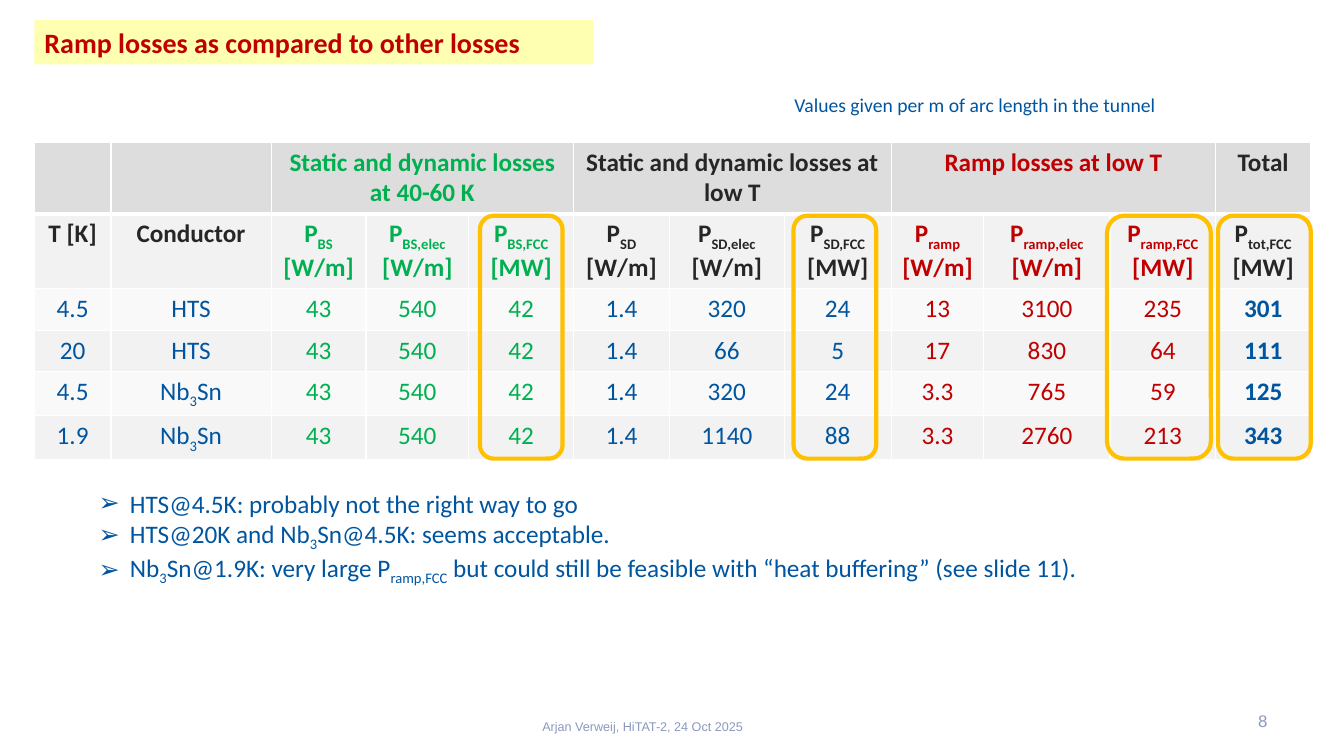
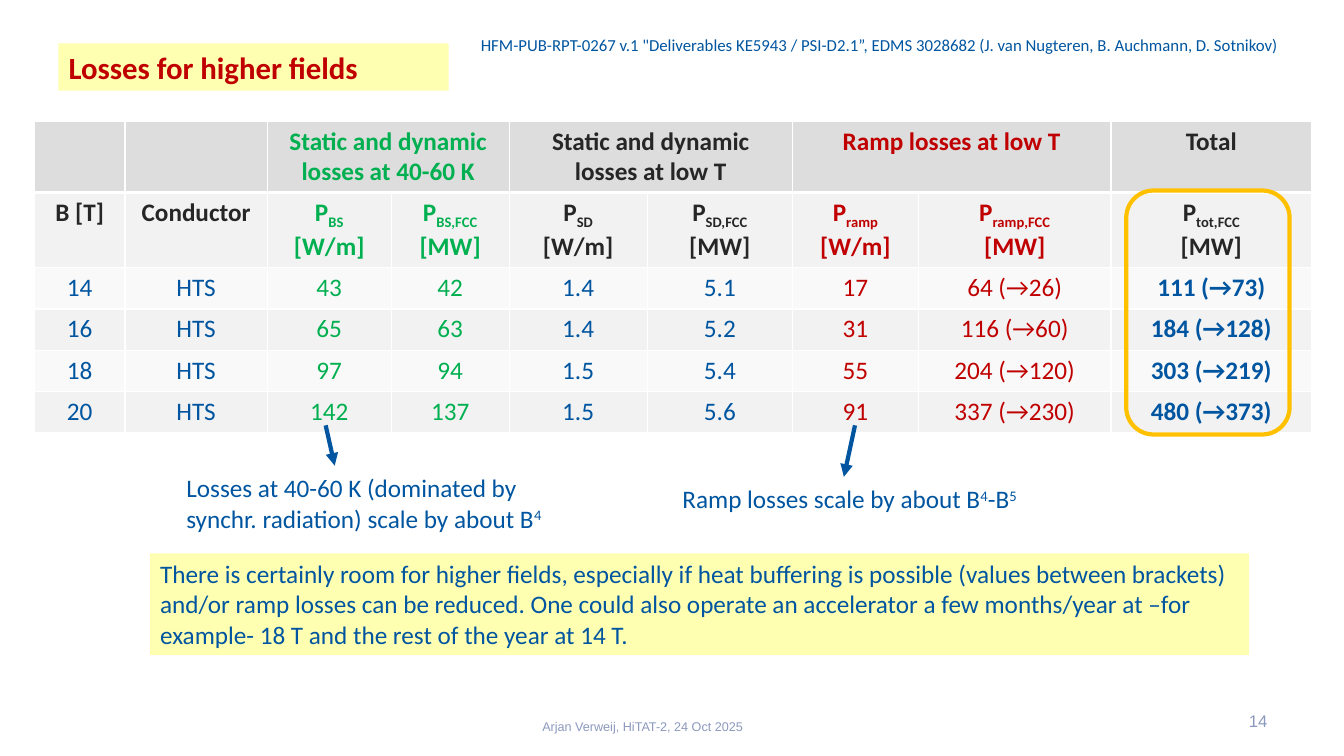
"""Build two slides on accelerator magnet losses."""
import lxml.etree
import pptx
import pptx.dml.color
import pptx.enum.shapes
import pptx.enum.text
import pptx.oxml.ns
import pptx.util

Inches = pptx.util.Inches
qn = pptx.oxml.ns.qn
ALIGN = pptx.enum.text.PP_ALIGN
ANCHOR = pptx.enum.text.MSO_ANCHOR

COLORS = {
    "blue": "0055A0", "red": "C00000", "green": "00B050", "ink": "262626",
    "footer": "8C99BE", "yellow": "FFFF00", "orange": "FFC000", "white": "FFFFFF",
    "header": "DDDDDD", "odd": "F2F2F2", "even": "F9F9F9",
}
BODY = {"name": "Calibri", "size": 18, "color": "blue", "bold": False}
FOOTER = {"name": "Arial", "size": 9, "color": "footer", "bold": False}
TITLE = {**BODY, "color": "red", "bold": True}
TABLE_LEFT = 0.34
ROW_HEIGHT = 0.41
SUBSCRIPT, SUPERSCRIPT = -25000, 30000


def rgb(name):
    """Return the named colour."""
    return pptx.dml.color.RGBColor.from_string(COLORS[name])


def set_attributes(target, values):
    """Set each attribute of the target from a dict."""
    for name, value in values.items():
        setattr(target, name, value)


def place(shape, box):
    """Move and size a shape in inches."""
    names = ("left", "top", "width", "height")
    set_attributes(shape, {name: Inches(value) for name, value in zip(names, box)})


def format_font(font, style):
    """Apply a text style to a font."""
    set_attributes(font, {"name": style["name"], "bold": style["bold"],
                          "size": pptx.util.Pt(style["size"])})
    font.color.rgb = rgb(style["color"])


def add_bullet(paragraph):
    """Give a paragraph an arrowhead bullet with a hanging indent."""
    properties = paragraph._p.get_or_add_pPr()
    indent = Inches(0.31)
    properties.set("marL", str(indent))
    properties.set("indent", str(-indent))
    lxml.etree.SubElement(properties, qn("a:buFont"), typeface="Arial")
    lxml.etree.SubElement(properties, qn("a:buChar"), char="➢")


def write_text(frame, text, style, align=ALIGN.LEFT, script=SUBSCRIPT, bullets=False):
    """Write lines of text, with text between tildes raised or lowered."""
    for index, line in enumerate(text.split("\n")):
        paragraph = frame.add_paragraph() if index else frame.paragraphs[0]
        paragraph.alignment = align
        if bullets:
            add_bullet(paragraph)
        for position, piece in enumerate(line.split("~")):
            if not piece:
                continue
            run = paragraph.add_run()
            run.text = piece
            format_font(run.font, style)
            if position % 2:
                run._r.get_or_add_rPr().set("baseline", str(script))


def format_frame(frame, anchor=ANCHOR.TOP):
    """Set wrapping, anchor and default insets of a text frame."""
    set_attributes(frame, {
        "word_wrap": True, "auto_size": pptx.enum.text.MSO_AUTO_SIZE.NONE,
        "vertical_anchor": anchor,
        "margin_left": Inches(0.1), "margin_right": Inches(0.1),
        "margin_top": Inches(0.05), "margin_bottom": Inches(0.05),
    })


def add_text(slide, box, text, style=BODY, anchor=ANCHOR.TOP, **options):
    """Add a wrapped text box."""
    shape = slide.shapes.add_textbox(*map(Inches, box))
    format_frame(shape.text_frame, anchor)
    write_text(shape.text_frame, text, style, **options)
    return shape


def fill_pale_yellow(shape):
    """Fill a shape with translucent yellow."""
    shape.fill.solid()
    shape.fill.fore_color.rgb = rgb("yellow")
    color = shape._element.spPr.find(qn("a:solidFill")).find(qn("a:srgbClr"))
    lxml.etree.SubElement(color, qn("a:alpha"), val="30000")


def add_titled_slide(presentation, title, box, size, number):
    """Add a slide with its title band, footer and number."""
    slide = presentation.slides.add_slide(presentation.slide_layouts[5])
    shape = slide.shapes.title
    place(shape, box)
    fill_pale_yellow(shape)
    format_frame(shape.text_frame)
    write_text(shape.text_frame, title, {**TITLE, "size": size})
    add_text(slide, (11.94, 6.95, 0.73, 0.4), number, {**FOOTER, "size": 12},
             ANCHOR.MIDDLE, align=ALIGN.RIGHT)
    add_text(slide, (5.28, 7.07, 2.55, 0.28), "Arjan Verweij, HiTAT-2, 24 Oct 2025",
             FOOTER, ANCHOR.MIDDLE)
    return slide


def format_cell(cell, row):
    """Give a cell its white borders and row fill."""
    heavy = {0: "lnB", 1: "lnT"}.get(row)
    properties = cell._tc.get_or_add_tcPr()
    for side in ("lnL", "lnR", "lnT", "lnB"):
        width = pptx.util.Pt(3 if side == heavy else 1)
        line = lxml.etree.SubElement(properties, qn(f"a:{side}"), w=str(width))
        fill = lxml.etree.SubElement(line, qn("a:solidFill"))
        lxml.etree.SubElement(fill, qn("a:srgbClr"), val=COLORS["white"])
    cell.fill.solid()
    cell.fill.fore_color.rgb = rgb("header" if row == 0 else "odd" if row % 2 else "even")


def add_loss_table(slide, top, widths, groups, body):
    """Add a table from column groups (title, heading colour, body colour, headings)."""
    size = (sum(widths), ROW_HEIGHT * (len(body) + 2))
    table = slide.shapes.add_table(len(body) + 2, len(widths),
                                   *map(Inches, (TABLE_LEFT, top, *size))).table
    set_attributes(table, {"first_row": False, "horz_banding": False})
    for column, width in zip(table.columns, widths):
        column.width = Inches(width)
    for index, row in enumerate(table.rows):
        row.height = Inches(ROW_HEIGHT)
        for cell in row.cells:
            format_cell(cell, index)
    first = 0
    for title, heading_color, body_color, headings in groups:
        heading_style = {**BODY, "color": heading_color, "bold": True}
        body_style = {**BODY, "color": body_color, "bold": title == "Total"}
        group_cell = table.cell(0, first)
        if len(headings) > 1:
            group_cell.merge(table.cell(0, first + len(headings) - 1))
        write_text(group_cell.text_frame, title, heading_style, ALIGN.CENTER)
        for column, heading in enumerate(headings, first):
            write_text(table.cell(1, column).text_frame, heading, heading_style, ALIGN.CENTER)
            for row, values in enumerate(body, 2):
                write_text(table.cell(row, column).text_frame, values[column],
                           body_style, ALIGN.CENTER)
        first += len(headings)


def loss_groups(variable, suffixes):
    """Return the column groups for the given power suffixes."""
    def headings(name):
        """Return the headings of one power."""
        return [f"P~{name}{suffix}~\n[{unit}]" for suffix, unit in suffixes]

    return [
        ("", "ink", "blue", [variable]),
        ("", "ink", "blue", ["Conductor"]),
        ("Static and dynamic losses at 40-60 K", "green", "green", headings("BS")),
        ("Static and dynamic losses at low T", "ink", "blue", headings("SD")),
        ("Ramp losses at low T", "red", "red", headings("ramp")),
        ("Total", "ink", "blue", ["P~tot,FCC~\n[MW]"]),
    ]


def add_highlight(slide, box):
    """Outline a table column in orange."""
    shape = slide.shapes.add_shape(pptx.enum.shapes.MSO_SHAPE.ROUNDED_RECTANGLE,
                                   *map(Inches, box))
    shape.shadow.inherit = False
    shape.fill.background()
    shape.line.color.rgb = rgb("orange")
    shape.line.width = pptx.util.Pt(3)


def add_arrow(slide, start, end):
    """Add a blue arrow between two points."""
    connector = slide.shapes.add_connector(pptx.enum.shapes.MSO_CONNECTOR.STRAIGHT,
                                           *map(Inches, (*start, *end)))
    connector.line.color.rgb = rgb("blue")
    connector.line.width = pptx.util.Pt(3)
    properties = connector._element.spPr
    lxml.etree.SubElement(properties.find(qn("a:ln")), qn("a:tailEnd"), type="triangle")
    lxml.etree.SubElement(properties, qn("a:effectLst"))


def build_ramp_losses(presentation):
    """Build the slide comparing ramp losses with other losses."""
    slide = add_titled_slide(presentation, "Ramp losses as compared to other losses",
                             (0.34, 0.2, 5.55, 0.44), 20, "8")
    groups = loss_groups("T [K]", [("", "W/m"), (",elec", "W/m"), (",FCC", "MW")])
    widths = [0.76, 1.59, 0.94, 1.02, 1.04, 0.95, 1.14, 1.06, 0.92, 1.25, 1.05, 0.94]
    add_loss_table(slide, 1.41, widths, groups, [
        ["4.5", "HTS", "43", "540", "42", "1.4", "320", "24", "13", "3100", "235", "301"],
        ["20", "HTS", "43", "540", "42", "1.4", "66", "5", "17", "830", "64", "111"],
        ["4.5", "Nb~3~Sn", "43", "540", "42", "1.4", "320", "24", "3.3", "765", "59", "125"],
        ["1.9", "Nb~3~Sn", "43", "540", "42", "1.4", "1140", "88", "3.3", "2760", "213", "343"],
    ])
    add_text(slide, (0.88, 4.79, 11.42, 1.01),
             "HTS@4.5K: probably not the right way to go\n"
             "HTS@20K and Nb~3~Sn@4.5K: seems acceptable.\n"
             "Nb~3~Sn@1.9K: very large P~ramp,FCC~ but could still be feasible "
             "with “heat buffering” (see slide 11).", bullets=True)
    add_text(slide, (7.78, 0.87, 5.22, 0.34),
             "Values given per m of arc length in the tunnel", {**BODY, "size": 14})
    for left, width in ((4.76, 0.82), (7.87, 0.82), (10.98, 1.03), (12.08, 0.92)):
        add_highlight(slide, (left, 2.14, width, 2.41))


def build_higher_fields(presentation):
    """Build the slide on losses for higher fields."""
    slide = add_titled_slide(presentation, "Losses for higher fields",
                             (0.58, 0.43, 3.87, 0.47), 22, "14")
    groups = loss_groups("B [T]", [("", "W/m"), (",FCC", "MW")])
    widths = [0.9, 1.41, 1.23, 1.17, 1.37, 1.44, 1.25, 1.91, 1.99]
    add_loss_table(slide, 1.2, widths, groups, [
        ["14", "HTS", "43", "42", "1.4", "5.1", "17", "64 (→26)", "111 (→73)"],
        ["16", "HTS", "65", "63", "1.4", "5.2", "31", "116 (→60)", "184 (→128)"],
        ["18", "HTS", "97", "94", "1.5", "5.4", "55", "204 (→120)", "303 (→219)"],
        ["20", "HTS", "142", "137", "1.5", "5.6", "91", "337 (→230)", "480 (→373)"],
    ])
    add_highlight(slide, (11.17, 1.89, 1.62, 2.42))
    add_text(slide, (1.75, 4.64, 3.84, 0.71),
             "Losses at 40-60 K (dominated by synchr. radiation) scale by about B~4~",
             script=SUPERSCRIPT)
    add_text(slide, (6.67, 4.75, 3.83, 0.4), "Ramp losses scale by about B~4~-B~5~",
             script=SUPERSCRIPT)
    add_arrow(slide, (3.23, 4.22), (3.32, 4.62))
    add_arrow(slide, (8.48, 4.22), (8.37, 4.73))
    conclusion = add_text(
        slide, (1.49, 5.49, 10.9, 1.01),
        "There is certainly room for higher fields, especially if heat buffering is possible "
        "(values between brackets) and/or ramp losses can be reduced. One could also operate "
        "an accelerator a few months/year at –for example- 18 T and the rest of the year at 14 T.")
    fill_pale_yellow(conclusion)
    add_text(slide, (4.67, 0.3, 8.51, 0.3),
             'HFM-PUB-RPT-0267 v.1 "Deliverables KE5943 / PSI-D2.1”, EDMS 3028682 '
             "(J. van Nugteren, B. Auchmann, D. Sotnikov)", {**BODY, "size": 12})


def main():
    """Build and save the presentation."""
    presentation = pptx.Presentation()
    set_attributes(presentation, {"slide_width": Inches(13.33), "slide_height": Inches(7.5)})
    build_ramp_losses(presentation)
    build_higher_fields(presentation)
    presentation.save("out.pptx")


if __name__ == "__main__":
    main()
